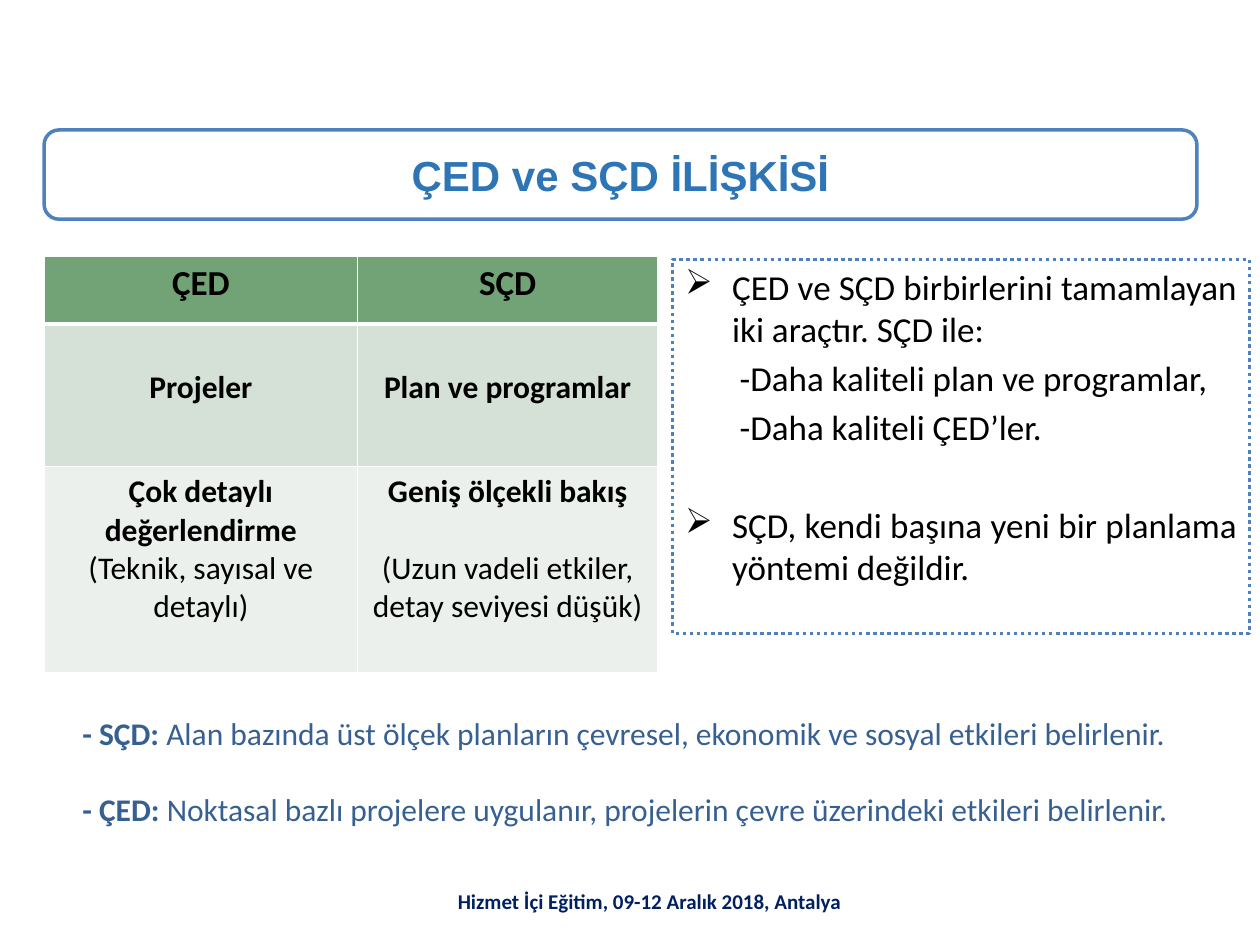
from lxml import etree
from pptx import Presentation
from pptx.dml.color import RGBColor
from pptx.enum.dml import MSO_LINE
from pptx.enum.shapes import MSO_SHAPE
from pptx.enum.text import MSO_ANCHOR, PP_ALIGN
from pptx.oxml.ns import qn
from pptx.util import Cm, Pt

RECTANGLE = MSO_SHAPE.RECTANGLE
ROUNDED = MSO_SHAPE.ROUNDED_RECTANGLE
DOTTED = MSO_LINE.ROUND_DOT
TOP = MSO_ANCHOR.TOP
MIDDLE = MSO_ANCHOR.MIDDLE
CENTER = PP_ALIGN.CENTER
JUSTIFY = PP_ALIGN.JUSTIFY

WHITE = RGBColor(0xFF, 0xFF, 0xFF)
BLACK = RGBColor(0x00, 0x00, 0x00)
OUTLINE = RGBColor(0x4F, 0x81, 0xBD)
TITLE_BLUE = RGBColor(0x2E, 0x75, 0xB6)
STATEMENT_BLUE = RGBColor(0x37, 0x60, 0x92)
NAVY = RGBColor(0x00, 0x20, 0x60)
ROW_FILLS = [
    RGBColor(0x72, 0xA3, 0x76),
    RGBColor(0xD5, 0xE0, 0xD6),
    RGBColor(0xEB, 0xF0, 0xEC),
]

COLUMN_WIDTHS = [6.32, 6.05]
ROW_HEIGHTS = [1.37, 2.87, 4.16]
ROW_SIZES = [20, 18, 18]
ROW_ANCHORS = [TOP, MIDDLE, TOP]
BOTTOM_MARGINS = [0.13, 0.42, 0.13]
CELLS = [
    [[("ÇED", True, 0)], [("SÇD", True, 0)]],
    [[("Projeler", True, 0)], [("Plan ve programlar", True, 0)]],
    [
        [("Çok detaylı değerlendirme", True, 0), ("(Teknik, sayısal ve detaylı)", False, 0)],
        [("Geniş ölçekli bakış", True, 0),
         ("(Uzun vadeli etkiler, detay seviyesi düşük)", False, 22)],
    ],
]
POINTS = [
    ("ÇED ve SÇD birbirlerini tamamlayan iki araçtır. SÇD ile:", True, 0),
    ("-Daha kaliteli plan ve programlar,", False, 4),
    ("-Daha kaliteli ÇED’ler.", False, 4),
    ("SÇD, kendi başına yeni bir planlama yöntemi değildir.", True, 32),
]
STATEMENTS = [
    ("- SÇD: ", "Alan bazında üst ölçek planların çevresel, ekonomik ve sosyal etkileri belirlenir."),
    ("- ÇED: ", "Noktasal bazlı projelere uygulanır, projelerin çevre üzerindeki etkileri belirlenir."),
]


def add_run(paragraph, text, size, color, bold=False, name="Calibri"):
    run = paragraph.add_run()
    run.text = text
    run.font.size = Pt(size)
    run.font.bold = bold
    run.font.name = name
    run.font.color.rgb = color


def next_paragraph(text_frame, index, alignment, space=0):
    paragraph = text_frame.add_paragraph() if index else text_frame.paragraphs[0]
    paragraph.alignment = alignment
    if space:
        paragraph.space_before = Pt(space)
    return paragraph


def indent(paragraph, left, first=0, bullet=None):
    properties = paragraph._p.get_or_add_pPr()
    properties.set("marL", str(Cm(left)))
    properties.set("indent", str(Cm(first)))
    if bullet:
        etree.SubElement(properties, qn("a:buChar")).set("char", bullet)


def add_outlined_shape(slide, kind, box):
    shape = slide.shapes.add_shape(kind, *map(Cm, box))
    shape.shadow.inherit = False
    shape.line.color.rgb = OUTLINE
    shape.line.width = Pt(2)
    return shape


def add_text_box(slide, box):
    text_frame = slide.shapes.add_textbox(*map(Cm, box)).text_frame
    text_frame.word_wrap = True
    return text_frame


def add_title(slide, box):
    shape = add_outlined_shape(slide, ROUNDED, box)
    shape.fill.solid()
    shape.fill.fore_color.rgb = WHITE
    shape.text_frame.vertical_anchor = MIDDLE
    paragraph = next_paragraph(shape.text_frame, 0, CENTER)
    add_run(paragraph, "ÇED ve SÇD İLİŞKİSİ", 24, TITLE_BLUE, True, "Arial")


def add_points(slide, box):
    shape = add_outlined_shape(slide, RECTANGLE, box)
    shape.fill.background()
    shape.line.dash_style = DOTTED
    shape.text_frame.vertical_anchor = TOP
    for index, (text, bulleted, space) in enumerate(POINTS):
        paragraph = next_paragraph(shape.text_frame, index, JUSTIFY, space)
        if bulleted:
            indent(paragraph, 0.95, -0.95, "➢")
        else:
            indent(paragraph, 1.1)
        add_run(paragraph, text, 20, BLACK)


def set_borders(cell, widths):
    properties = cell._tc.get_or_add_tcPr()
    for position, (side, width) in enumerate(zip("LRTB", widths)):
        line = etree.Element(qn(f"a:ln{side}"), w=str(Pt(width)))
        fill = etree.SubElement(line, qn("a:solidFill"))
        etree.SubElement(fill, qn("a:srgbClr"), val=str(WHITE))
        properties.insert(position, line)


def fill_cell(cell, row, paragraphs):
    cell.fill.solid()
    cell.fill.fore_color.rgb = ROW_FILLS[row]
    cell.vertical_anchor = ROW_ANCHORS[row]
    cell.margin_bottom = Cm(BOTTOM_MARGINS[row])
    set_borders(cell, (1, 1, 3 if row == 1 else 1, 3 if row == 0 else 1))
    for index, (text, bold, space) in enumerate(paragraphs):
        paragraph = next_paragraph(cell.text_frame, index, CENTER, space)
        add_run(paragraph, text, ROW_SIZES[row], BLACK, bold)


def add_comparison(slide, left, top):
    table = slide.shapes.add_table(
        len(ROW_HEIGHTS), len(COLUMN_WIDTHS), Cm(left), Cm(top),
        Cm(sum(COLUMN_WIDTHS)), Cm(sum(ROW_HEIGHTS)),
    ).table
    for column, width in zip(table.columns, COLUMN_WIDTHS):
        column.width = Cm(width)
    for row, height in enumerate(ROW_HEIGHTS):
        table.rows[row].height = Cm(height)
        for column, paragraphs in enumerate(CELLS[row]):
            fill_cell(table.cell(row, column), row, paragraphs)


def add_statements(slide, box):
    text_frame = add_text_box(slide, box)
    for index, (label, text) in enumerate(STATEMENTS):
        paragraph = next_paragraph(text_frame, index, JUSTIFY, 22 * index)
        indent(paragraph, 0.52)
        add_run(paragraph, label, 18, STATEMENT_BLUE, True)
        add_run(paragraph, text, 18, STATEMENT_BLUE)


def add_footer(slide, box):
    text_frame = add_text_box(slide, box)
    text_frame.vertical_anchor = MIDDLE
    paragraph = next_paragraph(text_frame, 0, CENTER)
    add_run(paragraph, "Hizmet İçi Eğitim, 09-12 Aralık 2018, Antalya", 12, NAVY, True)


def main():
    presentation = Presentation()
    presentation.slide_width = Cm(25.4)
    presentation.slide_height = Cm(19.05)
    slide = presentation.slides.add_slide(presentation.slide_layouts[6])
    add_points(slide, (13.56, 5.23, 11.63, 7.54))
    add_comparison(slide, 0.89, 5.16)
    add_footer(slide, (8.69, 17.65, 8.81, 1.02))
    add_statements(slide, (0.89, 14.27, 23.83, 2.57))
    add_title(slide, (0.89, 2.62, 23.24, 1.8))
    presentation.save("out.pptx")


if __name__ == "__main__":
    main()
